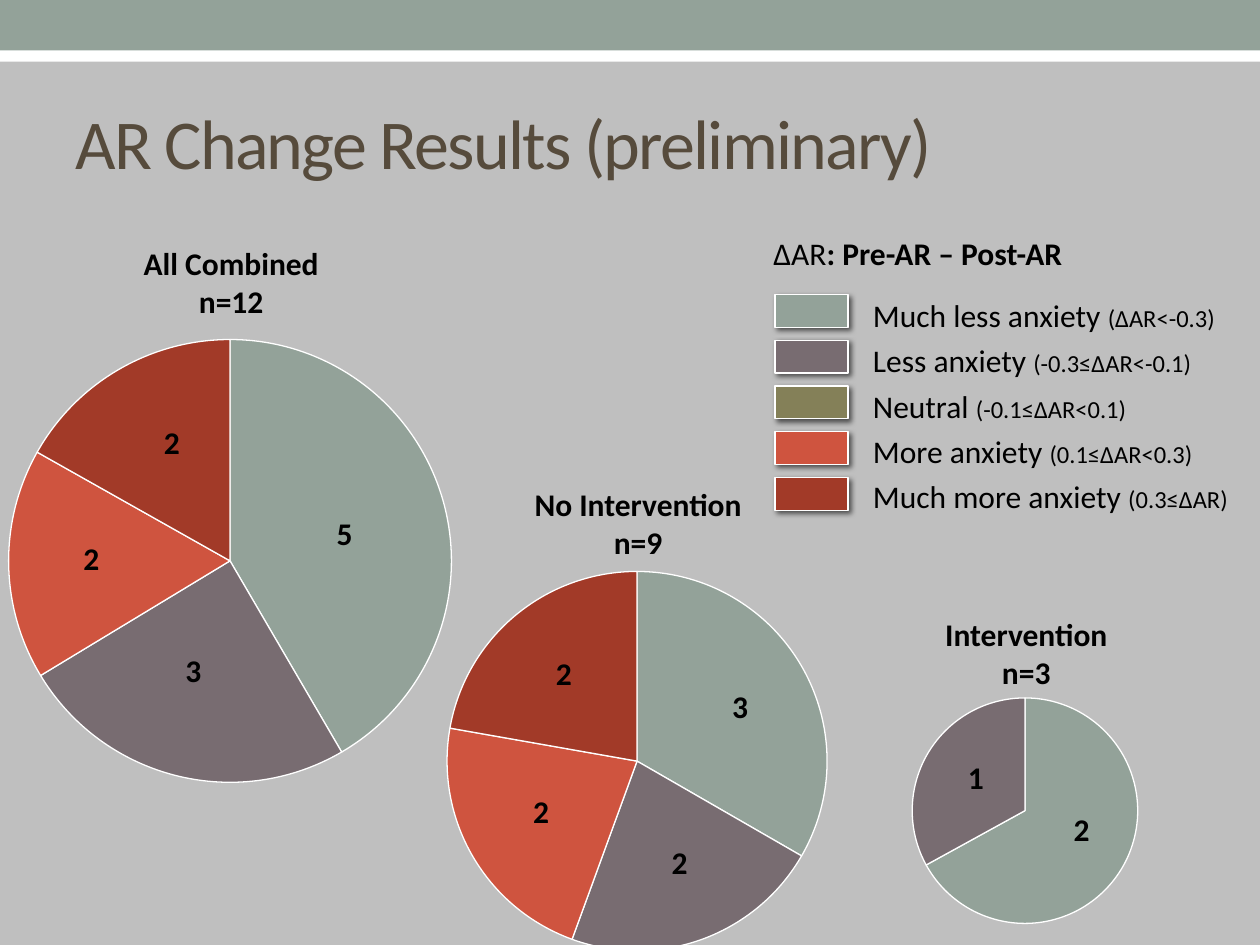
from lxml import etree
from pptx import Presentation
from pptx.chart.data import CategoryChartData
from pptx.dml.color import RGBColor
from pptx.enum.chart import XL_CHART_TYPE
from pptx.enum.shapes import MSO_SHAPE
from pptx.enum.text import MSO_ANCHOR, MSO_AUTO_SIZE, PP_ALIGN
from pptx.oxml import parse_xml
from pptx.oxml.ns import nsdecls, qn
from pptx.util import Inches, Pt

RECT = MSO_SHAPE.RECTANGLE
PIE = XL_CHART_TYPE.PIE
LEFT, CENTER = PP_ALIGN.LEFT, PP_ALIGN.CENTER
MIDDLE = MSO_ANCHOR.MIDDLE
GROW = MSO_AUTO_SIZE.SHAPE_TO_FIT_TEXT
rgb = RGBColor.from_string

SAGE = "93A299"
LEVELS = [
    ("Much less anxiety ", "(ΔAR<-0.3)", SAGE),
    ("Less anxiety ", "(-0.3≤ΔAR<-0.1)", "786C71"),
    ("Neutral ", "(-0.1≤ΔAR<0.1)", "848058"),
    ("More anxiety ", "(0.1≤ΔAR<0.3)", "CF543F"),
    ("Much more anxiety ", "(0.3≤ΔAR)", "A23A28"),
]
SHADOW = (
    f'<a:effectLst {nsdecls("a")}><a:outerShdw blurRad="38100" dist="25400" '
    'dir="2700000"><a:srgbClr val="000000"><a:alpha val="60000"/></a:srgbClr>'
    '</a:outerShdw></a:effectLst>'
)

prs = Presentation()
prs.slide_width, prs.slide_height = Inches(10), Inches(7.5)
slide = prs.slides.add_slide(prs.slide_layouts[5])
slide.background.fill.solid()
slide.background.fill.fore_color.rgb = rgb("BFBFBF")


def add_rect(x, y, w, h, color):
    box = slide.shapes.add_shape(RECT, Inches(x), Inches(y), Inches(w), Inches(h))
    box.shadow.inherit = False
    box.fill.solid()
    box.fill.fore_color.rgb = rgb(color)
    box.line.fill.background()
    return box


def add_text(x, y, w, h, lines, align=CENTER, space=1.0):
    """Each line is a list of runs: (text, size, bold)."""
    box = slide.shapes.add_textbox(Inches(x), Inches(y), Inches(w), Inches(h))
    frame = box.text_frame
    frame.word_wrap = False
    frame.auto_size = GROW
    for i, runs in enumerate(lines):
        para = frame.add_paragraph() if i else frame.paragraphs[0]
        para.alignment = align
        para.line_spacing = space
        for text, size, bold in runs:
            run = para.add_run()
            run.text = text
            run.font.name = "Calibri"
            run.font.size = Pt(size)
            run.font.bold = bold
            run.font.color.rgb = rgb("000000")


# Top band
add_rect(0, 0.24, 10, 0.25, "FFFFFF")
add_rect(0, 0, 10, 0.4, SAGE)

# Title
title = slide.shapes.title
title.left, title.top = Inches(0.5), Inches(0.58)
title.width, title.height = Inches(9), Inches(1.08)
title.text_frame.vertical_anchor = MIDDLE
para = title.text_frame.paragraphs[0]
para.alignment = LEFT
run = para.add_run()
run.text = "AR Change Results (preliminary)"
run.font.name = "Calibri"
run.font.size = Pt(40)
run.font.color.rgb = rgb("564B3C")
run.font._element.set("spc", "-100")

# Legend
for i, (name, span, color) in enumerate(LEVELS):
    key = add_rect(6.15, 2.34 + i * 0.3625, 0.58, 0.26, color)
    key.line.color.rgb = rgb("FFFFFF")
    key.line.width = Pt(0.75)
    props = key._element.spPr
    props.replace(props.find(qn("a:effectLst")), parse_xml(SHADOW))
add_text(6.83, 2.24, 3.08, 1.91,
         [[(name, 18, False), (span, 14, False)] for name, span, color in LEVELS],
         LEFT, 1.2)
add_text(6.04, 1.81, 2.55, 0.4,
         [[("ΔAR", 18, False), (": Pre-AR – Post-AR", 18, True)]], LEFT)

# Pies: frame, plot area as shares of the frame, percentages, caption
PIES = [
    ((-0.61, 1.39, 6, 5), (0.113, 0.261, 0.586, 0.703), (42, 25, 0, 17, 17),
     (1.03, 1.89, 1.61, 0.71), "All Combined", "n=12"),
    ((3.06, 4.53, 3.67, 3.06), (0.133, 0, 0.822, 0.986), (33, 22, 0, 22, 22),
     (4.13, 3.8, 1.87, 0.71), "No Intervention", "n=9"),
    ((6.56, 2.51, 6, 5), (0.113, 0.606, 0.299, 0.358), (67, 33, 0, 0, 0),
     (7.39, 4.83, 1.51, 0.71), "Intervention", "n=3"),
]
for frame, plot, shares, spot, group, count in PIES:
    data = CategoryChartData()
    data.categories = ["1", "2", "3", "4", "5"]
    data.add_series("Series 1", shares)
    chart = slide.shapes.add_chart(PIE, *map(Inches, frame), data).chart
    chart.has_title = False
    chart.has_legend = False
    chart.font.name = "Arial"
    chart.font.size = Pt(10)
    chart.font.color.rgb = rgb("000000")
    chart.plots[0].vary_by_categories = True
    for i, (name, span, color) in enumerate(LEVELS):
        slice_fmt = chart.plots[0].series[0].points[i].format
        slice_fmt.fill.solid()
        slice_fmt.fill.fore_color.rgb = rgb(color)
        slice_fmt.line.color.rgb = rgb("FFFFFF")
        slice_fmt.line.width = Pt(0.75)

    area = chart._chartSpace.find(".//" + qn("c:plotArea"))
    for old in area.findall(qn("c:layout")):
        area.remove(old)
    layout = etree.Element(qn("c:layout"))
    manual = etree.SubElement(layout, qn("c:manualLayout"))
    marks = [("layoutTarget", "inner"), ("xMode", "edge"), ("yMode", "edge")]
    for tag, val in marks + list(zip("xywh", plot)):
        etree.SubElement(manual, qn("c:" + tag)).set("val", str(val))
    area.insert(0, layout)

    add_text(*spot, [[(group, 18, True)], [(count, 18, True)]])

# Counts on the slices
COUNTS = [
    ("5", 2.57, 4.03), ("2", 0.56, 4.23), ("3", 1.37, 5.12), ("2", 1.2, 3.31),
    ("2", 4.31, 5.14), ("2", 4.13, 6.24), ("2", 5.23, 6.64), ("3", 5.71, 5.4),
    ("1", 7.58, 5.97), ("2", 8.42, 6.38),
]
for count, x, y in COUNTS:
    add_text(x, y, 0.33, 0.4, [[(count, 18, True)]])

prs.save("out.pptx")
